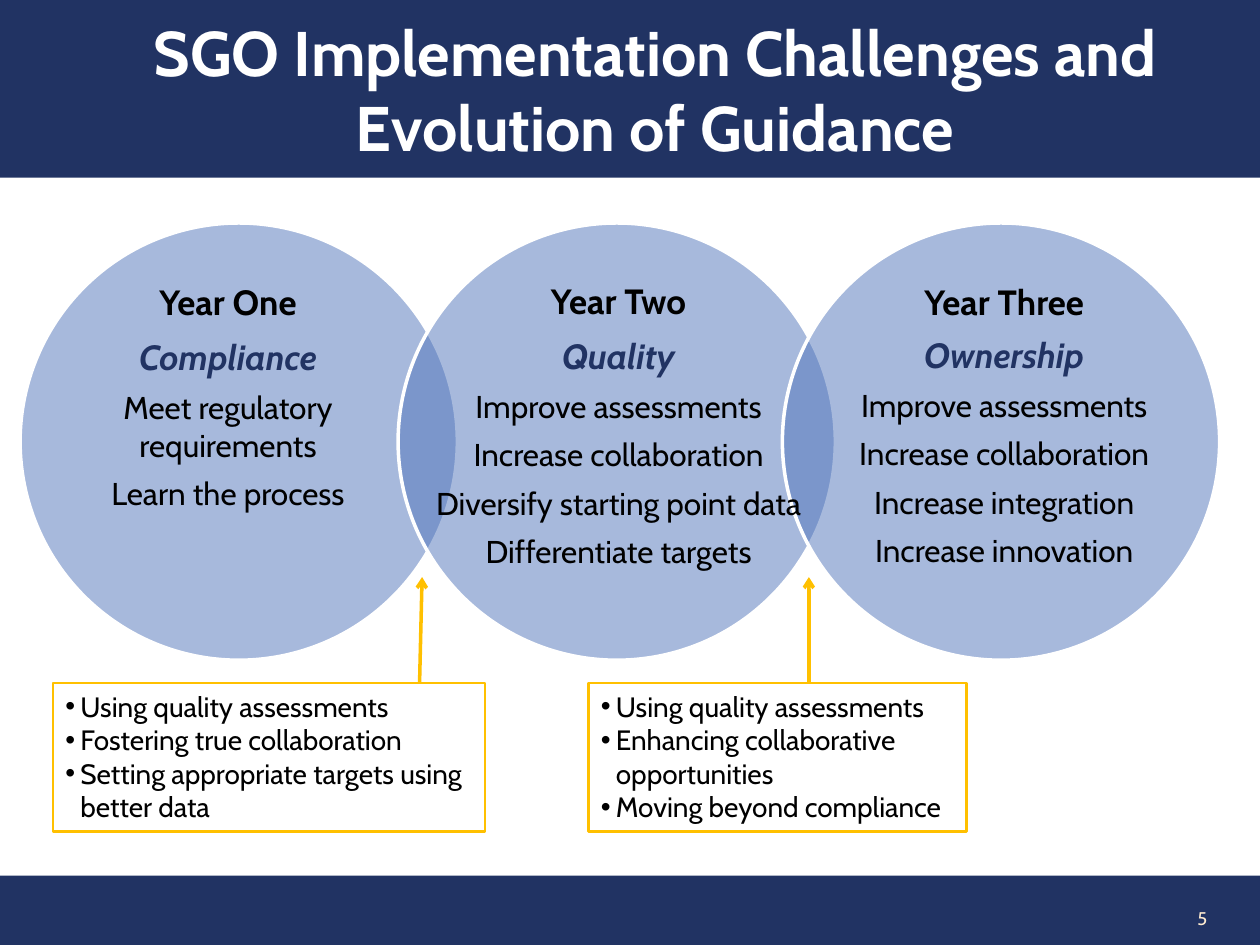
from dataclasses import dataclass

from lxml.etree import SubElement
from pptx import Presentation
from pptx.dml.color import RGBColor
from pptx.enum.shapes import MSO_CONNECTOR as Connector, MSO_SHAPE as Shape
from pptx.enum.text import MSO_ANCHOR as Anchor, MSO_AUTO_SIZE as AutoSize, PP_ALIGN as Align
from pptx.oxml.ns import qn
from pptx.util import Inches, Pt

NAVY, BLUE, GOLD = "213363", "5075BB", "FFC000"
WHITE, BLACK, CREAM = "FFFFFF", "000000", "FEEBD0"
CIRCLE_TOP, CIRCLE_SIZE = 1.77, 3.47
LABEL_WIDTH = 3.2
NOTE_TOP, NOTE_HEIGHT, ARROW_TIP = 5.42, 1.18, 4.58


@dataclass
class Year:
    circle_left: float
    label_left: float
    label_top: float
    label_height: float
    heading_gap: float
    heading: str
    theme: str
    points: list[str]


@dataclass
class Note:
    left: float
    width: float
    arrow_start: float
    arrow_end: float
    points: list[str]


YEARS = [
    Year(0.16, 0.21, 2.18, 2.34, 7.3, "Year One", "Compliance",
         ["Meet regulatory requirements", "Learn the process"]),
    Year(3.16, 3.31, 2.17, 2.81, 7.3, "Year Two", "Quality",
         ["Improve assessments", "Increase collaboration",
          "Diversify starting point data", "Differentiate targets"]),
    Year(6.21, 6.37, 2.18, 2.79, 6, "Year Three", "Ownership",
         ["Improve assessments", "Increase collaboration",
          "Increase integration", "Increase innovation"]),
]
NOTES = [
    Note(0.42, 3.43, 3.33, 3.35,
         ["Using quality assessments", "Fostering true collaboration",
          "Setting appropriate targets using better data"]),
    Note(4.67, 3, 6.42, 6.42,
         ["Using quality assessments", "Enhancing collaborative opportunities",
          "Moving beyond compliance"]),
]


def color(value: str) -> RGBColor:
    return RGBColor.from_string(value)


def apply(target, formats: dict) -> None:
    for name, value in formats.items():
        setattr(target, name, value)


def fill(shape, value: str) -> None:
    shape.fill.solid()
    shape.fill.fore_color.rgb = color(value)


def outline(shape, value: str, width: float) -> None:
    shape.line.color.rgb = color(value)
    shape.line.width = Pt(width)


def add_box(slide, kind, left: float, top: float, width: float, height: float):
    shape = slide.shapes.add_shape(
        kind, Inches(left), Inches(top), Inches(width), Inches(height))
    shape.shadow.inherit = False
    return shape


def add_text(slide, left: float, top: float, width: float, height: float):
    shape = slide.shapes.add_textbox(
        Inches(left), Inches(top), Inches(width), Inches(height))
    shape.text_frame.word_wrap = True
    return shape.text_frame


def write(paragraph, text: str, size: float, ink: str = BLACK, align=Align.CENTER,
          after: float = 0, bold: bool = False, italic: bool = False) -> None:
    run = paragraph.add_run()
    run.text = text
    apply(paragraph, {"alignment": align, "space_before": Pt(0), "space_after": Pt(after)})
    apply(run.font, {"name": "Cabin", "size": Pt(size), "bold": bold, "italic": italic})
    run.font.color.rgb = color(ink)


def next_paragraph(frame, index: int):
    return frame.add_paragraph() if index else frame.paragraphs[0]


def add_bullet(paragraph) -> None:
    properties = paragraph._p.get_or_add_pPr()
    properties.set("marL", str(Inches(0.12)))
    properties.set("indent", str(-Inches(0.12)))
    SubElement(properties, qn("a:buFont"), typeface="Arial")
    SubElement(properties, qn("a:buChar"), char="•")


def add_title(slide, text: str) -> None:
    title = slide.shapes.title
    apply(title, {"left": 0, "top": 0, "width": Inches(10), "height": Inches(1.41)})
    fill(title, NAVY)
    apply(title.text_frame, {
        "word_wrap": True, "auto_size": AutoSize.NONE, "vertical_anchor": Anchor.MIDDLE,
        "margin_left": Inches(0.5), "margin_right": Inches(0.1),
        "margin_top": Inches(0.05), "margin_bottom": Inches(0.05)})
    write(title.text_frame.paragraphs[0], text, 36, WHITE, bold=True)


def add_footer(slide, number: str) -> None:
    band = add_box(slide, Shape.RECTANGLE, 0, 6.95, 10.02, 0.59)
    fill(band, NAVY)
    band.line.fill.background()
    frame = add_text(slide, 8.22, 7.09, 1.46, 0.4)
    frame.vertical_anchor = Anchor.MIDDLE
    write(frame.paragraphs[0], number, 10.5, CREAM, Align.RIGHT)


def add_circle(slide, year: Year) -> None:
    circle = add_box(slide, Shape.OVAL, year.circle_left, CIRCLE_TOP, CIRCLE_SIZE, CIRCLE_SIZE)
    fill(circle, BLUE)
    tint = circle._element.spPr.find(qn("a:solidFill"))[0]
    SubElement(tint, qn("a:alpha"), val="50000")
    outline(circle, WHITE, 2)


def add_label(slide, year: Year) -> None:
    frame = add_text(slide, year.label_left, year.label_top, LABEL_WIDTH, year.label_height)
    frame.auto_size = AutoSize.SHAPE_TO_FIT_TEXT
    write(frame.paragraphs[0], year.heading, 20, after=year.heading_gap, bold=True)
    write(frame.add_paragraph(), year.theme, 20, NAVY, after=6, bold=True, italic=True)
    for point in year.points:
        write(frame.add_paragraph(), point, 18, after=6)


def add_note(slide, note: Note) -> None:
    box = add_box(slide, Shape.RECTANGLE, note.left, NOTE_TOP, note.width, NOTE_HEIGHT)
    box.fill.background()
    outline(box, GOLD, 1.5)
    frame = box.text_frame
    apply(frame, {"word_wrap": True, "auto_size": AutoSize.SHAPE_TO_FIT_TEXT,
                  "vertical_anchor": Anchor.TOP})
    for index, point in enumerate(note.points):
        paragraph = next_paragraph(frame, index)
        add_bullet(paragraph)
        write(paragraph, point, 16, align=Align.LEFT)


def add_arrow(slide, note: Note) -> None:
    arrow = slide.shapes.add_connector(
        Connector.STRAIGHT, Inches(note.arrow_start), Inches(NOTE_TOP),
        Inches(note.arrow_end), Inches(ARROW_TIP))
    outline(arrow, GOLD, 2)
    SubElement(arrow.line._get_or_add_ln(), qn("a:tailEnd"), type="arrow")
    SubElement(arrow._element.spPr, qn("a:effectLst"))


def main() -> None:
    presentation = Presentation()
    apply(presentation, {"slide_width": Inches(10), "slide_height": Inches(7.5)})
    slide = presentation.slides.add_slide(presentation.slide_layouts[5])
    add_footer(slide, "5")
    add_title(slide, "SGO Implementation Challenges and Evolution of Guidance")
    for draw, items in ((add_circle, YEARS), (add_label, YEARS),
                        (add_note, NOTES), (add_arrow, NOTES)):
        for item in items:
            draw(slide, item)
    presentation.save("out.pptx")


if __name__ == "__main__":
    main()
